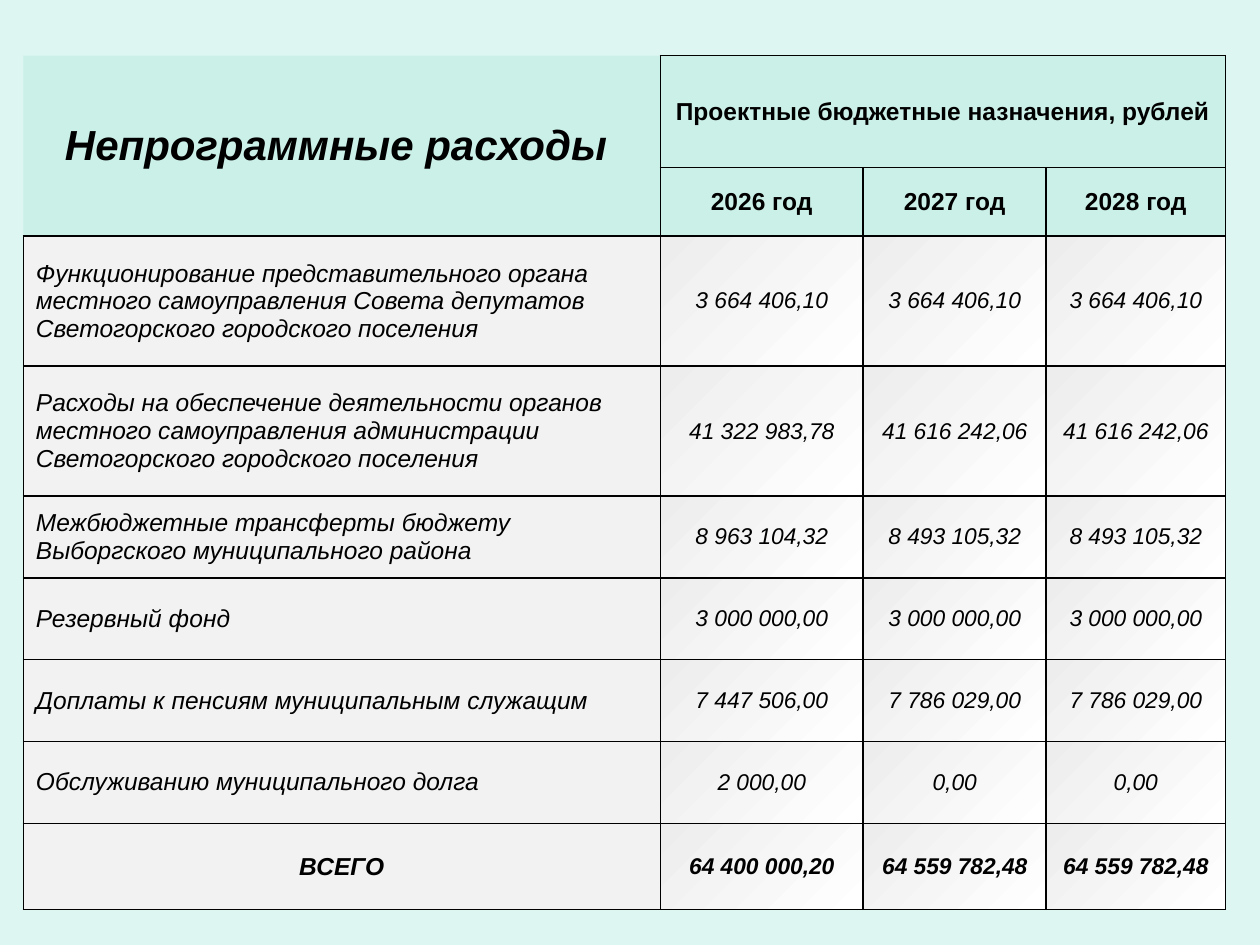
from lxml.etree import SubElement
from pptx import Presentation
from pptx.dml.color import RGBColor as RGB
from pptx.enum.text import MSO_ANCHOR as Anchor, PP_ALIGN as Align
from pptx.oxml.ns import qn
from pptx.util import Cm, Pt

BACK = RGB(0xDE, 0xF6, 0xF1)
MINT = RGB(0xB9, 0xEC, 0xE1)
GREY = RGB(0xF2, 0xF2, 0xF2)
SHADE = RGB(0xED, 0xED, 0xED)
WHITE = RGB(0xFF, 0xFF, 0xFF)
BLACK = RGB(0, 0, 0)

COLS = [12.84, 4.09, 3.69, 3.61]
ROWS = [2.26, 1.38, 2.62, 2.62, 1.65, 1.65, 1.65, 1.65, 1.74]
HEAD = 2
TIGHT = 3
LAST = len(ROWS) - 1

DATA = [
    ["Непрограммные расходы ", "Проектные бюджетные назначения, рублей", "", ""],
    ["", "2026 год", "2027 год", "2028 год"],
    ["Функционирование представительного органа местного самоуправления "
     "Совета депутатов Светогорского городского поселения",
     "3 664 406,10", "3 664 406,10", "3 664 406,10"],
    ["Расходы на обеспечение деятельности органов местного самоуправления "
     "администрации Светогорского городского поселения",
     "41 322 983,78", "41 616 242,06", "41 616 242,06"],
    ["Межбюджетные трансферты бюджету Выборгского муниципального района",
     "8 963 104,32", "8 493 105,32", "8 493 105,32"],
    ["Резервный фонд", "3 000 000,00", "3 000 000,00", "3 000 000,00"],
    ["Доплаты к пенсиям муниципальным служащим",
     "7 447 506,00", "7 786 029,00", "7 786 029,00"],
    ["Обслуживанию муниципального долга", "2 000,00", "0,00", "0,00"],
    ["ВСЕГО", "64 400 000,20", "64 559 782,48", "64 559 782,48"],
]


def set_edges(cell, shown):
    """Draw black borders on the shown sides and hide the others."""
    props = cell._tc.get_or_add_tcPr()
    for side in "LRTB":
        line = SubElement(props, qn(f"a:ln{side}"), w=str(Pt(1)))
        if side in shown:
            fill = SubElement(line, qn("a:solidFill"))
            SubElement(fill, qn("a:srgbClr"), val=str(BLACK))
        else:
            SubElement(line, qn("a:noFill"))


def fill_solid(cell, color):
    cell.fill.solid()
    cell.fill.fore_color.rgb = color


def fill_head(cell):
    """Fill with half-transparent mint."""
    fill_solid(cell, MINT)
    color = cell._tc.tcPr.find(f"{qn('a:solidFill')}/{qn('a:srgbClr')}")
    SubElement(color, qn("a:alpha"), val="50000")


def fill_shade(cell):
    cell.fill.gradient()
    cell.fill.gradient_angle = 315
    for stop, color in zip(cell.fill.gradient_stops, (SHADE, WHITE)):
        stop.color.rgb = color


def set_text(cell, text, size, bold, italic, align):
    cell.vertical_anchor = Anchor.MIDDLE
    cell.text_frame.text = text
    para = cell.text_frame.paragraphs[0]
    para.alignment = align
    for run in para.runs:
        font = run.font
        font.name = "Arial"
        font.size = Pt(size)
        font.bold = bold
        font.italic = italic
        font.color.rgb = BLACK


def style_cell(cell, row, col, text):
    head = row < HEAD
    label = col == 0
    set_edges(cell, "RB" if head and label else "LRTB")
    if head:
        fill_head(cell)
    elif label:
        fill_solid(cell, GREY)
    else:
        fill_shade(cell)
    if head:
        size = 24 if label else 14
    else:
        size = 14 if label else 13
    left = label and HEAD <= row < LAST
    set_text(cell, text, size, head or row == LAST, label or not head,
             Align.LEFT if left else Align.CENTER)
    if row == TIGHT and not label:
        cell.margin_left = cell.margin_right = cell.margin_top = Cm(0.03)
        cell.margin_bottom = 0


def add_budget(slide):
    frame = slide.shapes.add_table(len(ROWS), len(COLS), Cm(0.47), Cm(1.12),
                                   Cm(sum(COLS)), Cm(sum(ROWS)))
    table = frame.table
    table.first_row = table.horz_banding = False
    for col, width in zip(table.columns, COLS):
        col.width = Cm(width)
    for row, height in zip(table.rows, ROWS):
        row.height = Cm(height)
    for r, texts in enumerate(DATA):
        for c, text in enumerate(texts):
            style_cell(table.cell(r, c), r, c, text)
    table.cell(0, 0).merge(table.cell(1, 0))
    table.cell(0, 1).merge(table.cell(0, 3))


def main():
    deck = Presentation()
    deck.slide_width, deck.slide_height = Cm(25.4), Cm(19.05)
    slide = deck.slides.add_slide(deck.slide_layouts[6])
    slide.background.fill.solid()
    slide.background.fill.fore_color.rgb = BACK
    add_budget(slide)
    deck.save("out.pptx")


if __name__ == "__main__":
    main()
